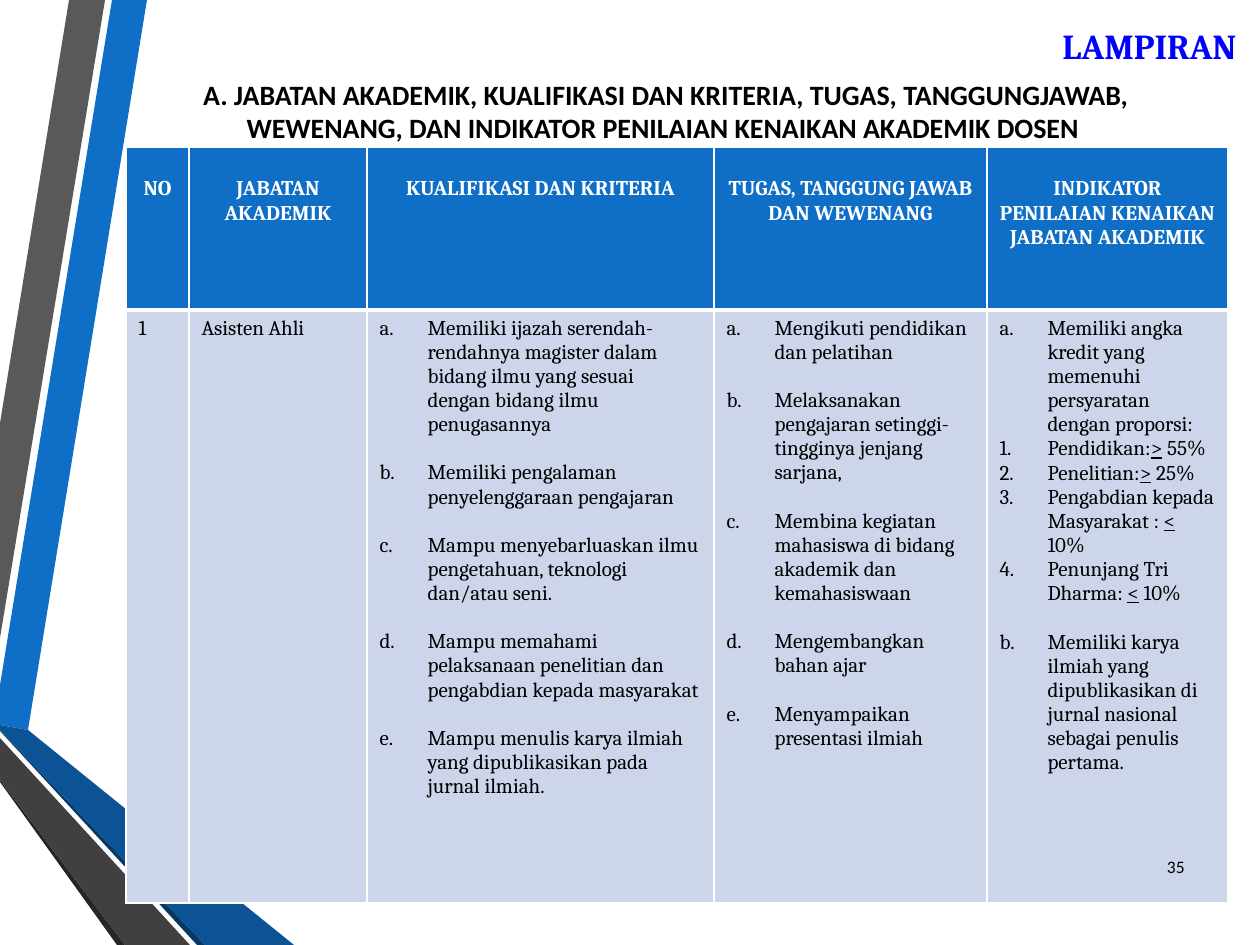
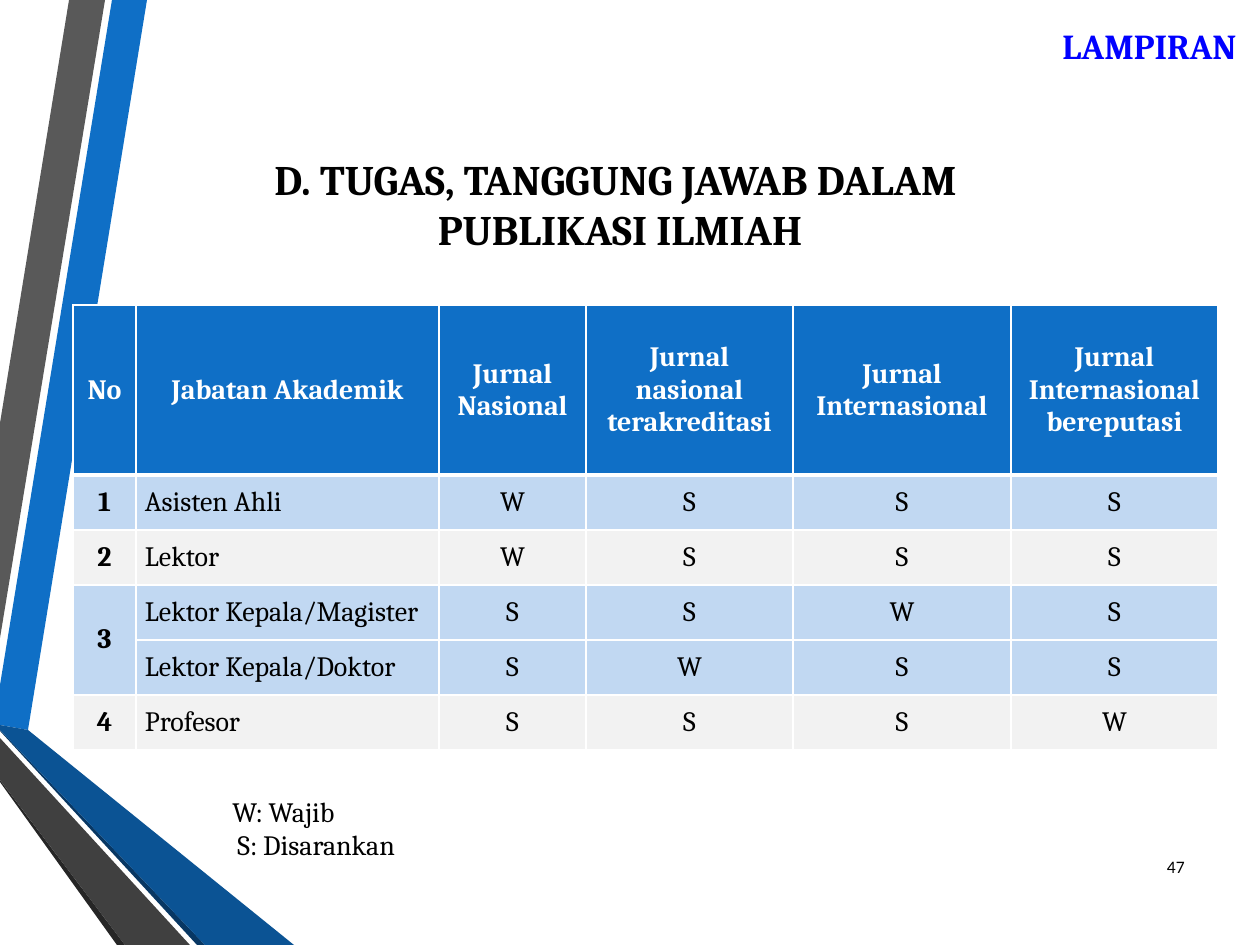
from lxml.etree import SubElement
from pptx import Presentation
from pptx.dml.color import RGBColor
from pptx.enum.text import MSO_ANCHOR as Anchor, PP_ALIGN as Align
from pptx.oxml.ns import qn
from pptx.util import Emu, Pt

APPENDIX_LABEL = "LAMPIRAN"

CRITERIA = {
    "page": "35",
    "title": "A. JABATAN AKADEMIK, KUALIFIKASI DAN KRITERIA, TUGAS, TANGGUNGJAWAB, "
             "WEWENANG, DAN INDIKATOR PENILAIAN KENAIKAN AKADEMIK DOSEN ",
    "headers": ["NO", "JABATAN AKADEMIK", "KUALIFIKASI DAN KRITERIA", "TUGAS, TANGGUNG JAWAB DAN WEWENANG",
                "INDIKATOR PENILAIAN KENAIKAN JABATAN AKADEMIK"],
    "position": ["1", "Asisten Ahli"],
    "qualifications": [
        "Memiliki ijazah serendah-rendahnya magister dalam bidang ilmu yang sesuai dengan bidang ilmu penugasannya",
        "Memiliki pengalaman penyelenggaraan pengajaran",
        "Mampu menyebarluaskan ilmu pengetahuan, teknologi dan/atau seni.",
        "Mampu memahami pelaksanaan penelitian dan pengabdian kepada masyarakat",
        "Mampu menulis karya ilmiah yang dipublikasikan pada jurnal ilmiah.",
    ],
    "duties": [
        "Mengikuti pendidikan dan pelatihan",
        "Melaksanakan pengajaran setinggi-tingginya jenjang sarjana,",
        "Membina kegiatan mahasiswa di bidang akademik dan kemahasiswaan",
        "Mengembangkan bahan ajar",
        "Menyampaikan presentasi ilmiah",
    ],
    "indicators": [
        "Memiliki angka kredit yang memenuhi persyaratan dengan proporsi:",
        "Memiliki karya ilmiah yang dipublikasikan di jurnal nasional sebagai penulis pertama.",
    ],
    "proportions": [
        ("Pendidikan:", ">", " 55%"),
        ("Penelitian:", ">", " 25%"),
        ("Pengabdian kepada Masyarakat : ", "<", " 10%"),
        ("Penunjang Tri Dharma: ", "<", " 10%"),
    ],
    "origin": (126, 147),
    "columns": [63, 178, 347, 273, 241],
    "rows": [163, 593],
}

PUBLICATIONS = {
    "page": "47",
    "title": ["D. TUGAS, TANGGUNG JAWAB DALAM", "PUBLIKASI ILMIAH"],
    "headers": ["No", "Jabatan Akademik", "Jurnal Nasional", "Jurnal nasional terakreditasi",
                "Jurnal Internasional", "Jurnal Internasional bereputasi"],
    "ranks": [
        ("1", "Asisten Ahli", "WSSS"),
        ("2", "Lektor", "WSSS"),
        ("3", "Lektor Kepala/Magister", "SSWS"),
        ("3", "Lektor Kepala/Doktor", "SWSS"),
        ("4", "Profesor", "SSSW"),
    ],
    "legend": ["W: Wajib", "S: Disarankan"],
    "origin": (73, 305),
    "columns": [63, 303, 147, 207, 218, 207],
    "rows": [170] + [55] * 5,
}

BANDS = [
    ("blue", [(0, 685), (0, 725), (28, 730), (147, 0), (112, 0)]),
    ("gray", [(105, 0), (69, 0), (0, 423), (0, 638)]),
    ("black", [(0, 780), (0, 782), (117, 945), (125, 945)]),
    ("navy", [(0, 730), (0, 731), (197, 945), (205, 945)]),
    ("deep_blue", [(0, 730), (205, 945), (294, 945), (28, 730), (0, 725)]),
    ("charcoal", [(0, 780), (125, 945), (190, 945), (0, 738)]),
]

THEME = {
    "colors": {
        "blue": "0F6FC6", "gray": "595959", "black": "262626", "navy": "083763",
        "deep_blue": "0B5394", "charcoal": "404040", "white": "FFFFFF", "text": "000000",
        "label": "0000FF", "criteria_row": "CCD5EA", "odd_row": "C1D8F2", "even_row": "F2F2F2",
    },
    "styles": {
        "label": {"name": "Cambria", "size": 20, "bold": True, "color": "label"},
        "page": {"name": "Calibri", "size": 10, "bold": False, "color": "text"},
        "title": {"name": "Calibri", "size": 16, "bold": True, "color": "text"},
        "large_title": {"name": "Cambria", "size": 24, "bold": True, "color": "text"},
        "small_header": {"name": "Cambria", "size": 12, "bold": True, "color": "white"},
        "small_body": {"name": "Cambria", "size": 12, "bold": False, "color": "text"},
        "header": {"name": "Cambria", "size": 16, "bold": True, "color": "white"},
        "number": {"name": "Cambria", "size": 16, "bold": True, "color": "text"},
        "body": {"name": "Cambria", "size": 16, "bold": False, "color": "text"},
    },
}

SCALE = 914400 / 126
SMALL_LINE = 24
LIST_INDENT = 48


def px(length):
    return Emu(round(length * SCALE))


def color(name):
    return RGBColor.from_string(THEME["colors"][name])


def apply(target, values):
    for name, value in values.items():
        setattr(target, name, value)


def write(frame, paragraphs, style, align=Align.LEFT):
    values = dict(THEME["styles"][style])
    font_color = color(values.pop("color"))
    values["size"] = Pt(values["size"])
    for index, content in enumerate(paragraphs):
        paragraph = frame.add_paragraph() if index else frame.paragraphs[0]
        paragraph.alignment = align
        parts = (content,) if isinstance(content, str) else content
        for position, text in enumerate(parts):
            run = paragraph.add_run()
            run.text = text
            apply(run.font, values)
            run.font.color.rgb = font_color
            if position == 1:
                run.font.underline = True
    return frame.paragraphs


def add_text(slide, box, paragraphs, style, align=Align.LEFT, anchor=Anchor.TOP):
    frame = slide.shapes.add_textbox(*map(px, box)).text_frame
    apply(frame, {"word_wrap": True, "vertical_anchor": anchor})
    return write(frame, paragraphs, style, align)


def add_bands(slide):
    for fill, points in BANDS:
        builder = slide.shapes.build_freeform(*points[0], scale=SCALE)
        builder.add_line_segments(points[1:], close=True)
        shape = builder.convert_to_shape()
        shape.shadow.inherit = False
        shape.fill.solid()
        shape.fill.fore_color.rgb = color(fill)
        shape.line.fill.background()


def add_slide(presentation):
    slide = presentation.slides.add_slide(presentation.slide_layouts[6])
    add_bands(slide)
    add_text(slide, (325, 18, 924, 55), [APPENDIX_LABEL], "label", Align.RIGHT)
    return slide


def add_page_number(slide, page):
    add_text(slide, (1138, 842, 59, 50), [page], "page", Align.RIGHT, Anchor.MIDDLE)


def add_grid(slide, content):
    columns, rows = content["columns"], content["rows"]
    box = (*content["origin"], sum(columns), sum(rows))
    table = slide.shapes.add_table(len(rows), len(columns), *map(px, box)).table
    apply(table, {"first_row": True, "horz_banding": False})
    for column, width in zip(table.columns, columns):
        column.width = px(width)
    for row, height in zip(table.rows, rows):
        row.height = px(height)
    return table


def format_cell(cell, row, fill, values):
    properties = cell._tc.get_or_add_tcPr()
    for side in "LRTB":
        thick = (row, side) in ((0, "B"), (1, "T"))
        line = SubElement(properties, qn(f"a:ln{side}"), w=str(Pt(3 if thick else 1)))
        SubElement(SubElement(line, qn("a:solidFill")), qn("a:srgbClr"), val=THEME["colors"]["white"])
    cell.fill.solid()
    cell.fill.fore_color.rgb = color(fill)
    apply(cell, values)


def number(paragraph, scheme, start=1, gap=0):
    paragraph.space_before = px(gap)
    properties = paragraph._p.get_or_add_pPr()
    properties.set("marL", str(px(LIST_INDENT)))
    properties.set("indent", str(-px(LIST_INDENT)))
    bullet = SubElement(properties, qn("a:buAutoNum"), type=scheme)
    if start > 1:
        bullet.set("startAt", str(start))


def write_lettered(cell, items):
    for index, paragraph in enumerate(write(cell.text_frame, items, "small_body")):
        number(paragraph, "alphaLcPeriod", gap=SMALL_LINE if index else 0)


def write_indicators(cell, indicators, proportions):
    first, last = indicators
    paragraphs = write(cell.text_frame, [first, *proportions, last], "small_body")
    number(paragraphs[0], "alphaLcPeriod")
    for paragraph in paragraphs[1:-1]:
        number(paragraph, "arabicPeriod")
    number(paragraphs[-1], "alphaLcPeriod", start=2, gap=SMALL_LINE)


def build_criteria(presentation):
    content = CRITERIA
    slide = add_slide(presentation)
    table = add_grid(slide, content)
    for column, header in enumerate(content["headers"]):
        cell = table.cell(0, column)
        format_cell(cell, 0, "blue", {"margin_top": px(6 + SMALL_LINE)})
        write(cell.text_frame, [header], "small_header", Align.CENTER)
        format_cell(table.cell(1, column), 1, "criteria_row", {})
    for column, text in enumerate(content["position"]):
        write(table.cell(1, column).text_frame, [text], "small_body")
    write_lettered(table.cell(1, 2), content["qualifications"])
    write_lettered(table.cell(1, 3), content["duties"])
    write_indicators(table.cell(1, 4), content["indicators"], content["proportions"])
    add_text(slide, (135, 69, 1062, 84), [content["title"]], "title", Align.CENTER, Anchor.MIDDLE)
    add_page_number(slide, content["page"])


def build_publications(presentation):
    content = PUBLICATIONS
    slide = add_slide(presentation)
    add_page_number(slide, content["page"])
    title = add_text(slide, (262, 147, 716, 115), content["title"], "large_title")
    title[1].alignment = Align.CENTER
    table = add_grid(slide, content)
    cell_values = {"vertical_anchor": Anchor.MIDDLE, "margin_left": px(9), "margin_right": px(9),
                   "margin_top": 0, "margin_bottom": 0}
    lines = [content["headers"]] + [(rank, name, *marks) for rank, name, marks in content["ranks"]]
    for row, line in enumerate(lines):
        fill = "blue" if row == 0 else "odd_row" if int(line[0]) % 2 else "even_row"
        repeated = row > 0 and line[0] == lines[row - 1][0]
        for column, text in enumerate(line):
            cell = table.cell(row, column)
            format_cell(cell, row, fill, cell_values)
            if repeated and column == 0:
                table.cell(row - 1, 0).merge(cell)
                continue
            style = "header" if row == 0 else "body" if column else "number"
            align = Align.JUSTIFY if row and column == 1 else Align.CENTER
            write(cell.text_frame, [text], style, align)
    legend = add_text(slide, (220, 788, 525, 81), content["legend"], "body")
    legend[1]._p.get_or_add_pPr().set("marL", str(px(5)))


def main():
    presentation = Presentation()
    apply(presentation, {"slide_width": px(1260), "slide_height": px(945)})
    build_criteria(presentation)
    build_publications(presentation)
    presentation.save("out.pptx")


if __name__ == "__main__":
    main()
